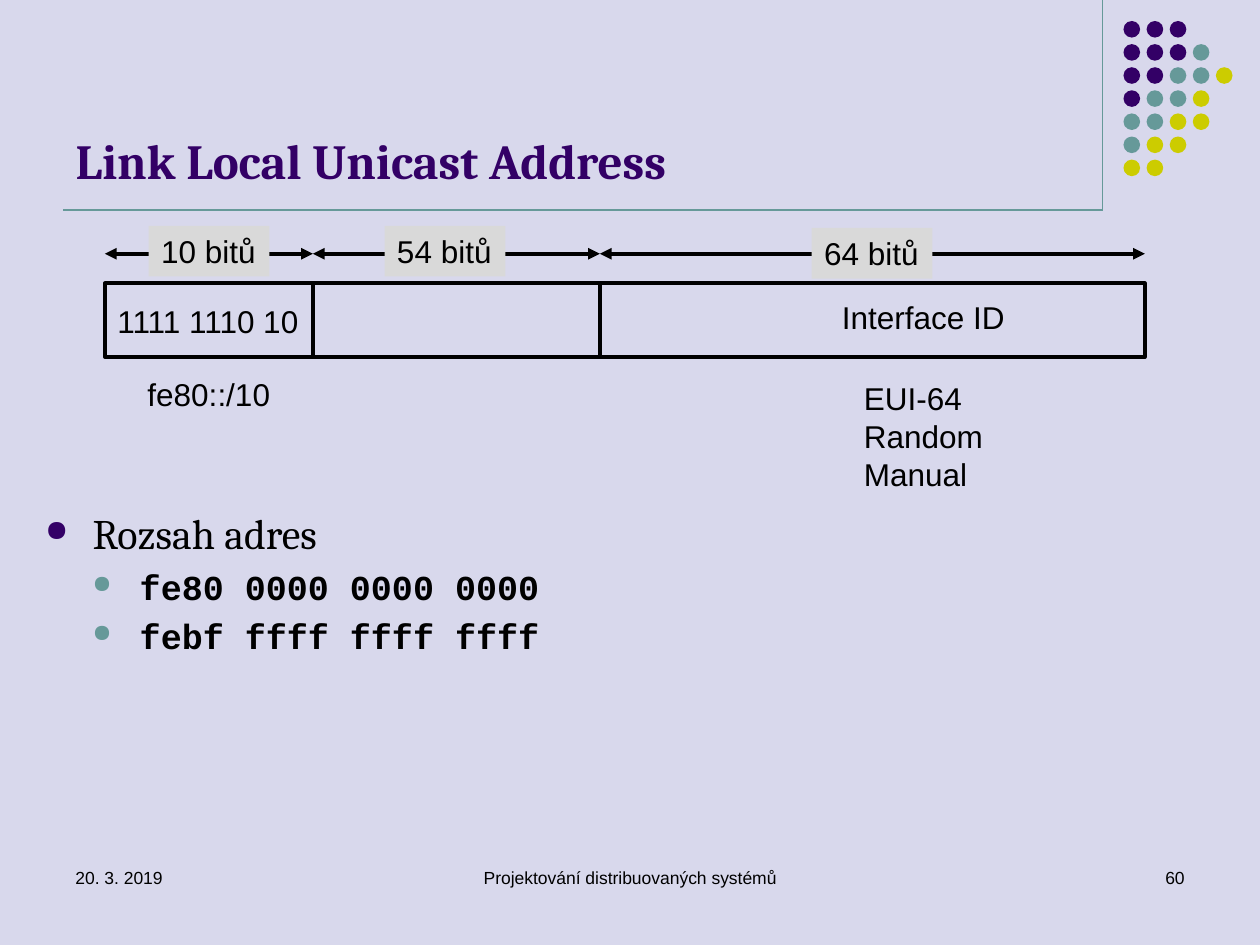
"""Builds the slide on the link local unicast address."""
from lxml.etree import SubElement
from pptx import Presentation
from pptx.dml.color import RGBColor
from pptx.enum.shapes import MSO_CONNECTOR as Connector, MSO_SHAPE as Shape
from pptx.enum.text import MSO_ANCHOR as Anchor, PP_ALIGN as Align
from pptx.oxml.ns import qn
from pptx.util import Pt

PURPLE, TEAL, YELLOW = "330066", "669999", "CCCC00"
BLACK, GREY, LAVENDER = "000000", "D9D9D9", "D8D8EC"

TITLE = "Link Local Unicast Address"
DOT_ROWS = ["PPP", "PPPT", "PPTTY", "PTTY", "TTYY", "TYY", "YY"]
DOT_COLOURS = {"P": PURPLE, "T": TEAL, "Y": YELLOW}
DOT_LEFT, DOT_TOP, DOT_PITCH, DOT_SIZE = 642, 12, 13.2, 9.5

FIELD_EDGES = [60, 178.8, 342.8, 654.2]
FIELD_TOP, FIELD_HEIGHT, ARROW_Y = 162, 42, 145
BIT_LABELS = [("10 bitů", 85, 129), ("54 bitů", 219.8, 129), ("64 bitů", 463.8, 130.2)]
NOTES = [
    (["1111 1110 10"], 60, 169.2, 119),
    (["Interface ID"], 474, 167, 109),
    (["fe80::/10"], 77.2, 211, 85),
    (["EUI-64", "Random", "Manual"], 486.6, 213.2, 84),
]
RANGE_LINES = [
    ("Rozsah adres", 0, "Cambria", 24, False, PURPLE),
    ("fe80 0000 0000 0000", 1, "Courier New", 20, True, TEAL),
    ("febf ffff ffff ffff", 1, "Courier New", 20, True, TEAL),
]
FOOTER = [
    ("20. 3. 2019", 36, 168, Align.LEFT),
    ("Projektování distribuovaných systémů", 246, 228, Align.CENTER),
    ("60", 516, 168, Align.RIGHT),
]


def rgb(colour):
    return RGBColor.from_string(colour)


def add_run(paragraph, text, size, font="Arial", colour=BLACK, bold=False):
    run = paragraph.add_run()
    run.text = text
    run.font.name, run.font.size, run.font.bold = font, Pt(size), bold
    run.font.color.rgb = rgb(colour)


def add_line(slide, start, end, colour=BLACK, width=2.25, arrows=False):
    line = slide.shapes.add_connector(Connector.STRAIGHT, *map(Pt, start + end))
    line.line.color.rgb = rgb(colour)
    line.line.width = Pt(width)
    if arrows:
        outline = line.line._get_or_add_ln()
        for tag in ("a:headEnd", "a:tailEnd"):
            SubElement(outline, qn(tag), type="triangle")
    SubElement(line._element.spPr, qn("a:effectLst"))


def add_shape(slide, kind, box, fill=None, border=None):
    shape = slide.shapes.add_shape(kind, *map(Pt, box))
    shape.shadow.inherit = False
    if fill:
        shape.fill.solid()
        shape.fill.fore_color.rgb = rgb(fill)
    else:
        shape.fill.background()
    if border:
        shape.line.color.rgb = rgb(border)
        shape.line.width = Pt(2.25)
    else:
        shape.line.fill.background()
    return shape


def write_lines(shape, lines, size, align=Align.LEFT, wrap=False):
    frame = shape.text_frame
    frame.word_wrap = wrap
    frame.vertical_anchor = Anchor.TOP
    for index, text in enumerate(lines):
        paragraph = frame.add_paragraph() if index else frame.paragraphs[0]
        paragraph.alignment = align
        add_run(paragraph, text, size)


def add_text(slide, lines, box, size, align=Align.LEFT, wrap=False):
    write_lines(slide.shapes.add_textbox(*map(Pt, box)), lines, size, align, wrap)


def add_master_art(slide):
    add_line(slide, (630, 0), (630, 120), TEAL, 0.75)
    add_line(slide, (36, 120), (630, 120), TEAL, 0.75)
    for row, codes in enumerate(DOT_ROWS):
        for column, code in enumerate(codes):
            box = (DOT_LEFT + column * DOT_PITCH, DOT_TOP + row * DOT_PITCH, DOT_SIZE, DOT_SIZE)
            add_shape(slide, Shape.OVAL, box, DOT_COLOURS[code])


def add_title(slide):
    title = slide.shapes.title
    title.left, title.top, title.width, title.height = map(Pt, (36, 9.6, 594, 102))
    title.text_frame.vertical_anchor = Anchor.BOTTOM
    paragraph = title.text_frame.paragraphs[0]
    paragraph.alignment = Align.LEFT
    add_run(paragraph, TITLE, 28, "Cambria", PURPLE, True)


def add_range(slide):
    frame = slide.shapes.add_textbox(*map(Pt, (18.8, 286.6, 648, 100))).text_frame
    frame.word_wrap = True
    for index, (text, level, font, size, bold, bullet_colour) in enumerate(RANGE_LINES):
        paragraph = frame.add_paragraph() if index else frame.paragraphs[0]
        paragraph.level = level
        properties = paragraph._p.get_or_add_pPr()
        properties.set("marL", str(Pt(27 * (level + 1))))
        properties.set("indent", str(-Pt(27)))
        if index:
            paragraph.space_before = Pt(size * 0.2)
        SubElement(SubElement(properties, qn("a:buClr")), qn("a:srgbClr"), val=bullet_colour)
        SubElement(properties, qn("a:buSzPct"), val="70000")
        SubElement(properties, qn("a:buChar"), char="●")
        add_run(paragraph, text, size, font, BLACK, bold)


def add_address(slide):
    left, right = FIELD_EDGES[0], FIELD_EDGES[-1]
    add_shape(slide, Shape.RECTANGLE, (left, FIELD_TOP, right - left, FIELD_HEIGHT), border=BLACK)
    for edge in FIELD_EDGES[1:-1]:
        add_line(slide, (edge, FIELD_TOP), (edge, FIELD_TOP + FIELD_HEIGHT))
    for start, end in zip(FIELD_EDGES, FIELD_EDGES[1:]):
        add_line(slide, (start, ARROW_Y), (end, ARROW_Y), arrows=True)
    for label, x, y in BIT_LABELS:
        write_lines(add_shape(slide, Shape.RECTANGLE, (x, y, 69, 29), GREY), [label], 18)
    for lines, x, y, width in NOTES:
        add_text(slide, lines, (x, y, width, 7.2 + 21.8 * len(lines)), 18)


def main():
    deck = Presentation()
    deck.slide_width, deck.slide_height = Pt(720), Pt(540)
    slide = deck.slides.add_slide(deck.slide_layouts[5])
    slide.background.fill.solid()
    slide.background.fill.fore_color.rgb = rgb(LAVENDER)
    add_master_art(slide)
    add_title(slide)
    add_range(slide)
    for text, x, width, align in FOOTER:
        add_text(slide, [text], (x, 492, width, 36), 10, align, True)
    add_address(slide)
    deck.save("out.pptx")


if __name__ == "__main__":
    main()
